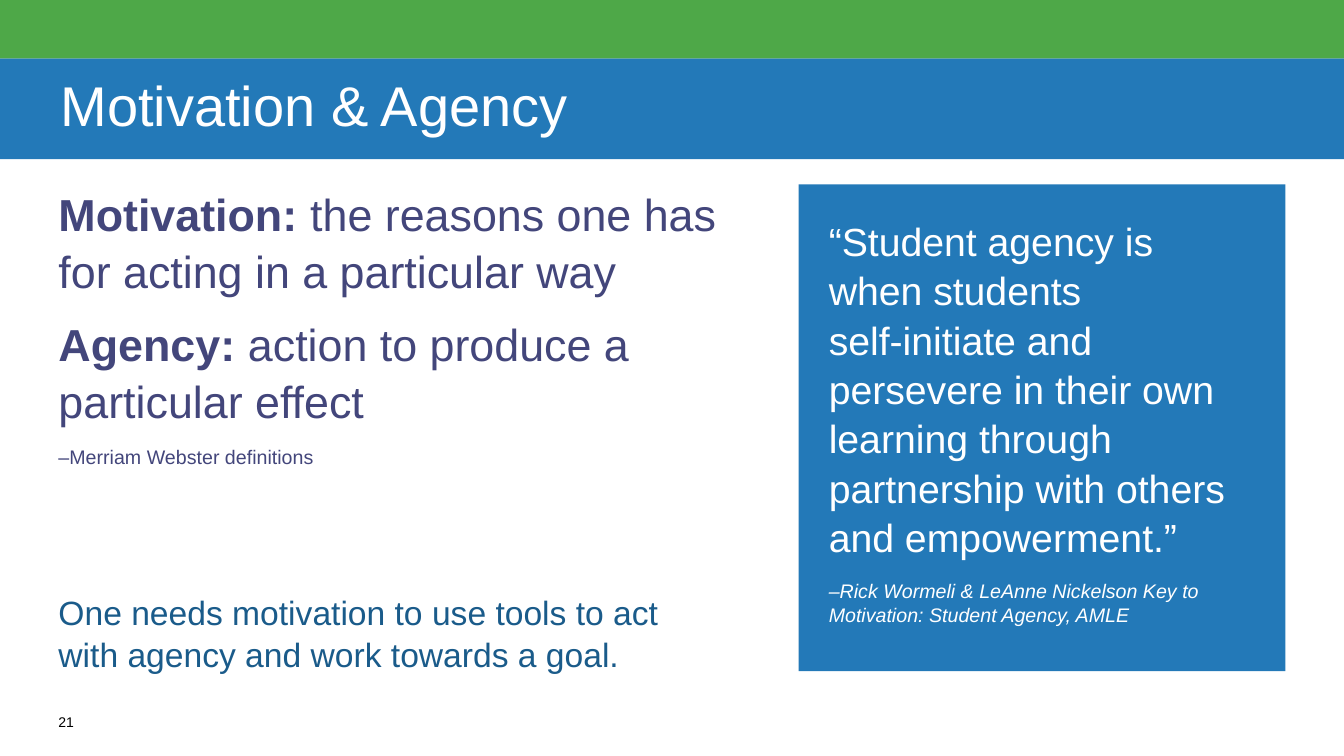
from pptx import Presentation
from pptx.dml.color import RGBColor
from pptx.enum.shapes import MSO_SHAPE
from pptx.enum.text import MSO_ANCHOR, PP_ALIGN
from pptx.util import Inches, Pt

GREEN = RGBColor(0x4E, 0xA8, 0x48)
BLUE = RGBColor(0x23, 0x79, 0xB8)
PURPLE = RGBColor(0x43, 0x46, 0x7B)
NAVY = RGBColor(0x1A, 0x5B, 0x8A)
WHITE = RGBColor(0xFF, 0xFF, 0xFF)
BLACK = RGBColor(0, 0, 0)

# Content: each paragraph is a list of (text, size, style) runs
TITLE = [[("Motivation & Agency", 40, "")]]
TERMS = [
    [("Motivation: ", 32, "b"),
     ("the reasons one has for acting in a particular way", 32, "")],
    [("Agency: ", 32, "b"), ("action to produce a particular effect", 32, "")],
    [("–Merriam Webster definitions", 14, "")],
]
GOAL = [[("One needs motivation to use tools to act with agency "
          "and work towards a goal.", 24, "")]]
QUOTE = [
    [("“Student agency is when students \nself-initiate and persevere in "
      "their own learning through partnership with others and "
      "empowerment.”", 28, "")],
    [("–Rick Wormeli & LeAnne Nickelson Key to Motivation: "
      "Student Agency, AMLE", 14, "i")],
]
NUMBER = [[("21", 10, "")]]

# Layout in inches
WIDTH, HEIGHT = 13.33, 7.5
EDGE, TOP, BAND = 0.58, 1.83, 0.58
LEFT_W, SIDE = 6.58, 4.83
GOAL_H = 0.81
BASE = TOP + SIDE

prs = Presentation()
prs.slide_width, prs.slide_height = Inches(WIDTH), Inches(HEIGHT)
slide = prs.slides.add_slide(prs.slide_layouts[5])
shapes = slide.shapes


def write(shape, paras, color, inset=(0, 0), line=1.05, gap=6):
    frame = shape.text_frame
    frame.word_wrap = True
    frame.margin_left = frame.margin_right = Inches(inset[0])
    frame.margin_top = frame.margin_bottom = Inches(inset[1])
    for i, runs in enumerate(paras):
        para = frame.add_paragraph() if i else frame.paragraphs[0]
        para.alignment = PP_ALIGN.LEFT
        para.line_spacing = line
        para.space_before = Pt(gap if i else 0)
        para.space_after = Pt(gap)
        for text, size, style in runs:
            for j, part in enumerate(text.split("\n")):
                if j:
                    para.add_line_break()
                run = para.add_run()
                run.text = part
                font = run.font
                font.name, font.size = "Arial", Pt(size)
                font.bold, font.italic = style == "b", style == "i"
                font.color.rgb = color


def block(x, y, w, h, fill):
    shape = shapes.add_shape(MSO_SHAPE.RECTANGLE, *map(Inches, (x, y, w, h)))
    shape.shadow.inherit = False
    shape.fill.solid()
    shape.fill.fore_color.rgb = fill
    shape.line.fill.background()
    return shape


def label(x, y, w, h):
    return shapes.add_textbox(*map(Inches, (x, y, w, h)))


# Top band and title bar
block(0, 0, WIDTH, BAND, GREEN)
title = shapes.title
title.left, title.top = Inches(0), Inches(BAND)
title.width, title.height = Inches(WIDTH), Inches(1)
title.fill.solid()
title.fill.fore_color.rgb = BLUE
title.text_frame.vertical_anchor = MSO_ANCHOR.MIDDLE
write(title, TITLE, WHITE, inset=(0.6, 0), line=0.9, gap=0)

# Left column
write(label(EDGE, TOP, LEFT_W, 2.73), TERMS, PURPLE)
write(label(EDGE, BASE - GOAL_H, LEFT_W, GOAL_H), GOAL, NAVY)

# Quote panel
panel = block(WIDTH - EDGE - SIDE, TOP, SIDE, SIDE, BLUE)
panel.text_frame.vertical_anchor = MSO_ANCHOR.TOP
write(panel, QUOTE, WHITE, inset=(0.3, 0.3))

# Slide number
write(label(EDGE, 7.08, 0.42, 0.25), NUMBER, BLACK, line=1, gap=0)

prs.save("out.pptx")
